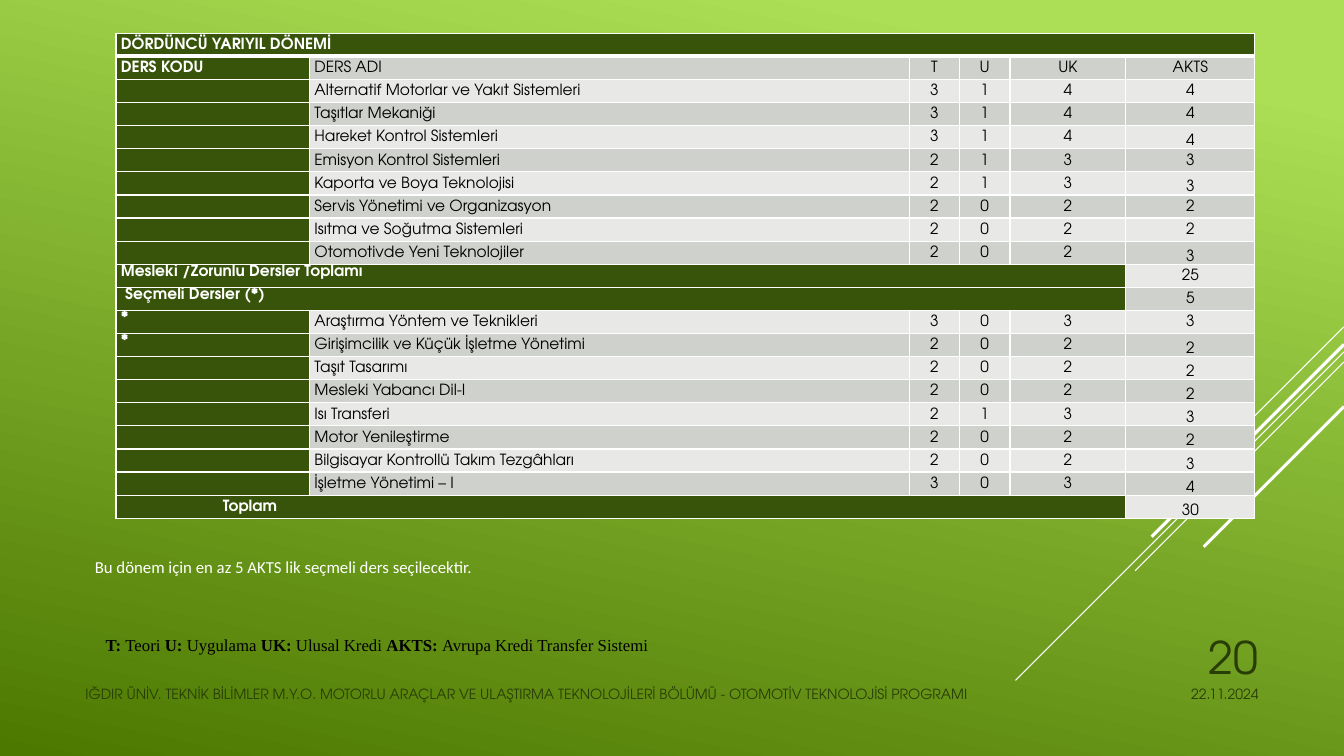
import dataclasses

import lxml.etree
import pptx
import pptx.dml.color
import pptx.enum.shapes
import pptx.enum.text
import pptx.oxml.ns
import pptx.util

ALIGN = pptx.enum.text.PP_ALIGN
ANCHOR = pptx.enum.text.MSO_ANCHOR
COLUMNS, ROWS = 160, 90  # slide grid, twelve steps to the inch
STEP = pptx.util.Inches(1) // 12


@dataclasses.dataclass(frozen=True)
class Theme:
    light: str = "ACDF55"
    deep: str = "4C7800"
    header: str = "38540A"
    bands: tuple = ("E8E9E7", "CED1CC")
    white: str = "FFFFFF"
    ink: str = "000000"
    footer: str = "293E06"
    font: str = "TeX Gyre Adventor"
    note_font: str = "Calibri"
    legend_font: str = "Times New Roman"
    cell_size: float = 11
    note_size: float = 12
    footer_size: float = 10
    number_size: float = 32


THEME = Theme()

TERM = "DÖRDÜNCÜ YARIYIL DÖNEMİ"
HEADINGS = ("DERS KODU", "DERS ADI", "T", "U", "UK", "AKTS")
REQUIRED = [
    ("", "Alternatif Motorlar ve Yakıt Sistemleri", 3, 1, 4, 4),
    ("", "Taşıtlar Mekaniği", 3, 1, 4, 4),
    ("", "Hareket Kontrol Sistemleri", 3, 1, 4, 4),
    ("", "Emisyon Kontrol Sistemleri", 2, 1, 3, 3),
    ("", "Kaporta ve Boya Teknolojisi", 2, 1, 3, 3),
    ("", "Servis Yönetimi ve Organizasyon", 2, 0, 2, 2),
    ("", "Isıtma ve Soğutma Sistemleri", 2, 0, 2, 2),
    ("", "Otomotivde Yeni Teknolojiler", 2, 0, 2, 3),
]
ELECTIVE = [
    ("*", "Araştırma Yöntem ve Teknikleri", 3, 0, 3, 3),
    ("*", "Girişimcilik ve Küçük İşletme Yönetimi", 2, 0, 2, 2),
    ("", "Taşıt Tasarımı", 2, 0, 2, 2),
    ("", "Mesleki Yabancı Dil-I", 2, 0, 2, 2),
    ("", "Isı Transferi", 2, 1, 3, 3),
    ("", "Motor Yenileştirme", 2, 0, 2, 2),
    ("", "Bilgisayar Kontrollü Takım Tezgâhları", 2, 0, 2, 3),
    ("", "İşletme Yönetimi – I", 3, 0, 3, 4),
]


def subtotal(label, credits):
    return (label, None, None, None, None, credits)


CURRICULUM = [
    (TERM, None, None, None, None, None), HEADINGS, *REQUIRED,
    subtotal("Mesleki /Zorunlu Dersler Toplamı", 25),
    subtotal("Seçmeli Dersler (*)", 5),
    *ELECTIVE, subtotal("Toplam", 30),
]
COLUMN_WIDTHS = (23.04, 71.4, 6, 6, 10.08, 15.36)
ROW_HEIGHT = 2.75
LABEL_INDENTS = {"Seçmeli Dersler (*)": 1.1, "Toplam": 12.72}
LOW_CREDIT_ROWS = {4, 6, 9, *range(13, 21)}
TOP_LABELS = {"Mesleki /Zorunlu Dersler Toplamı", "Seçmeli Dersler (*)", "*"}

# Start row on the right edge, length of the 45-degree run, weight
RAYS = [(38.9, 12, 0.75), (41.9, 39.1, 0.75), (43.1, 24.85, 0.75),
        (41, 22.9, 2.25), (48.4, 16.7, 2.25)]

LEGEND = [("T: ", "Teori "), ("U: ", "Uygulama "), ("UK: ", "Ulusal Kredi "),
          ("AKTS: ", "Avrupa Kredi Transfer Sistemi")]


def rgb(color):
    return pptx.dml.color.RGBColor.from_string(color)


def grid(*steps):
    return [round(step * STEP) for step in steps]


def apply(target, values):
    for name, value in values.items():
        setattr(target, name, value)


class CourseSlide:
    def __init__(self, deck, theme):
        self.theme = theme
        self.slide = deck.slides.add_slide(deck.slide_layouts[6])

    def background(self):
        fill = self.slide.background.fill
        fill.gradient()
        fill.gradient_angle = 258
        stops = ((0.1, self.theme.light), (1, self.theme.deep))
        for stop, (position, color) in zip(fill.gradient_stops, stops):
            stop.position = position
            stop.color.rgb = rgb(color)

    def ray(self, row, run, weight):
        line = self.slide.shapes.add_connector(
            pptx.enum.shapes.MSO_CONNECTOR.STRAIGHT,
            *grid(COLUMNS, row, COLUMNS - run, row + run))
        line.line.color.rgb = rgb(self.theme.white)
        line.line.width = pptx.util.Pt(weight)
        properties = line._element.spPr
        lxml.etree.SubElement(properties, pptx.oxml.ns.qn("a:effectLst"))

    def fill_paragraph(self, paragraph, runs, color, size, font, layout):
        """Add (text, bold) runs to a paragraph, with its layout values."""
        apply(paragraph, layout)
        for text, bold in runs:
            run = paragraph.add_run()
            run.text = text
            apply(run.font, {"name": font, "size": pptx.util.Pt(size), "bold": bold})
            run.font.color.rgb = rgb(color)

    def text(self, box, runs, color, size, font, align=ALIGN.LEFT, anchor=ANCHOR.TOP):
        frame = self.slide.shapes.add_textbox(*grid(*box)).text_frame
        apply(frame, {"word_wrap": True, "vertical_anchor": anchor})
        self.fill_paragraph(frame.paragraphs[0], runs, color, size, font,
                            {"alignment": align})

    def border(self, cell, heavy_bottom):
        properties = cell._tc.get_or_add_tcPr()
        for position, side in enumerate(("lnL", "lnR", "lnT", "lnB")):
            weight = 3 if heavy_bottom and side == "lnB" else 1
            line = properties.makeelement(
                pptx.oxml.ns.qn(f"a:{side}"), {"w": str(int(pptx.util.Pt(weight)))})
            fill = lxml.etree.SubElement(line, pptx.oxml.ns.qn("a:solidFill"))
            lxml.etree.SubElement(fill, pptx.oxml.ns.qn("a:srgbClr"), val=self.theme.white)
            properties.insert(position, line)

    def cell(self, cell, value, row, column):
        theme = self.theme
        label = row == 0 or column == 0
        anchor = ANCHOR.MIDDLE
        if value in TOP_LABELS:
            anchor = ANCHOR.TOP
        elif column == 5 and row in LOW_CREDIT_ROWS:
            anchor = ANCHOR.BOTTOM
        left, right = grid(LABEL_INDENTS.get(value, 0.6), 0.6)
        apply(cell, {"margin_left": left, "margin_right": right, "margin_top": 0,
                     "margin_bottom": 0, "vertical_anchor": anchor})
        cell.fill.solid()
        cell.fill.fore_color.rgb = rgb(theme.header if label else theme.bands[row % 2])
        self.border(cell, row == 0)
        paragraph = cell.text_frame.paragraphs[0]
        if value in (None, ""):
            lxml.etree.SubElement(paragraph._p, pptx.oxml.ns.qn("a:endParaRPr"),
                                  sz=str(round(theme.cell_size * 100)))
            return
        self.fill_paragraph(paragraph, [(str(value), label)],
                            theme.white if label else theme.ink,
                            theme.cell_size, theme.font,
                            {"alignment": ALIGN.CENTER if column > 1 else ALIGN.LEFT,
                             "line_spacing": 1.07, "space_after": pptx.util.Pt(8)})

    def table(self, left, top, widths, row_height, records):
        table = self.slide.shapes.add_table(
            len(records), len(widths),
            *grid(left, top, sum(widths), row_height * len(records))).table
        apply(table, {"first_row": False, "horz_banding": False})
        for column, width in zip(table.columns, grid(*widths)):
            column.width = width
        for row, record in enumerate(records):
            table.rows[row].height = grid(row_height)[0]
            for column, value in enumerate(record):
                self.cell(table.cell(row, column), value, row, column)
            if None in record:
                last = len(record) - 1 if record[-1] is None else len(record) - 2
                table.cell(row, 0).merge(table.cell(row, last))


def main():
    deck = pptx.Presentation()
    apply(deck, {"slide_width": COLUMNS * STEP, "slide_height": ROWS * STEP})
    page = CourseSlide(deck, THEME)
    page.background()
    for ray in RAYS:
        page.ray(*ray)
    page.table(13.8, 3.96, COLUMN_WIDTHS, ROW_HEIGHT, CURRICULUM)

    footer = (THEME.footer, THEME.footer_size, THEME.font)
    page.text((130, 81, 21, 4.8), [("22.11.2024", False)], *footer, align=ALIGN.RIGHT)
    page.text((9, 81, 117.4, 4.8),
              [("IĞDIR ÜNİV. TEKNİK BİLİMLER M.Y.O. MOTORLU ARAÇLAR VE ULAŞTIRMA "
                "TEKNOLOJİLERİ BÖLÜMÜ - OTOMOTİV TEKNOLOJİSİ PROGRAMI", False)], *footer)
    page.text((136, 73.2, 15, 8.8), [("20", False)], THEME.footer, THEME.number_size,
              THEME.font, align=ALIGN.RIGHT, anchor=ANCHOR.BOTTOM)
    page.text((10.1, 65.7, 123.5, 3.6),
              [("Bu dönem için en az 5 AKTS lik seçmeli ders seçilecektir.", False)],
              THEME.white, THEME.note_size, THEME.note_font, anchor=ANCHOR.MIDDLE)
    page.text((11.4, 75, 123.6, 3.6),
              [run for term, meaning in LEGEND for run in ((term, True), (meaning, False))],
              THEME.ink, THEME.note_size, THEME.legend_font, anchor=ANCHOR.MIDDLE)
    deck.save("out.pptx")


if __name__ == "__main__":
    main()
